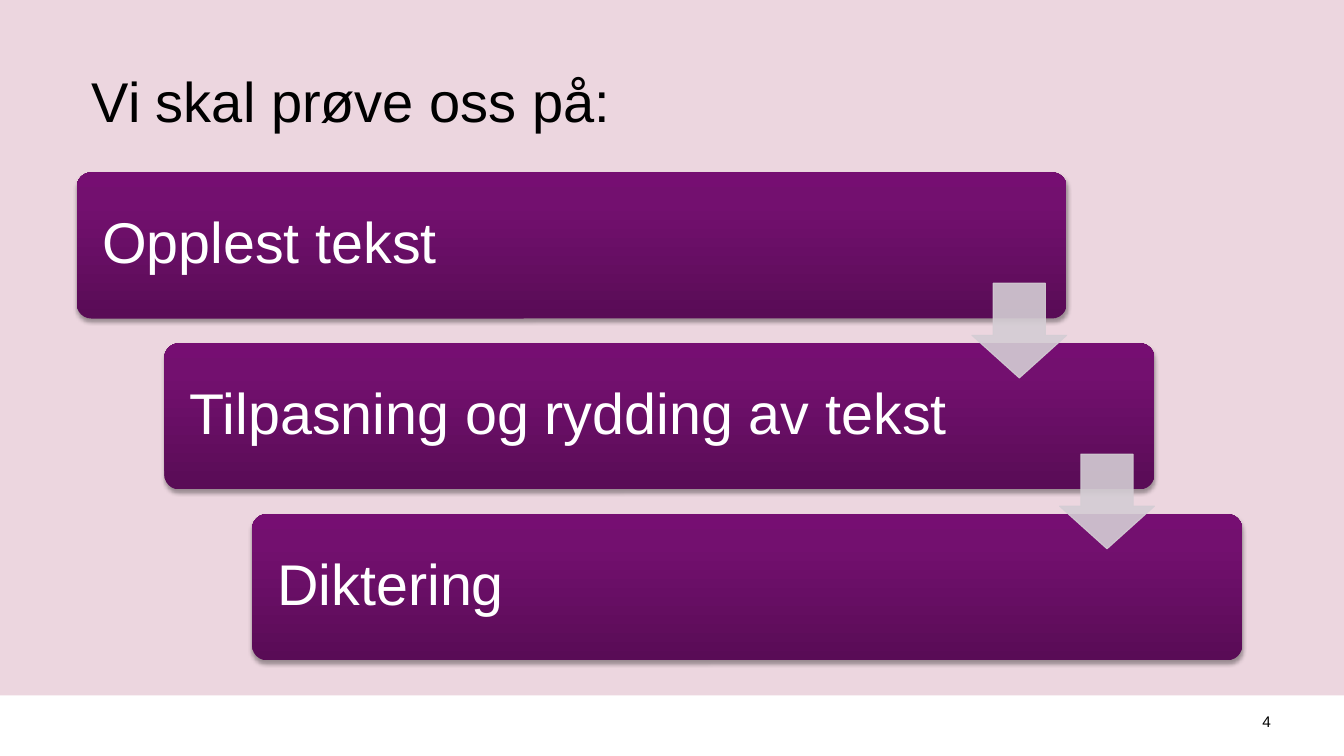
"""Build a slide with three stepped boxes joined by arrows."""
from lxml.etree import SubElement
from pptx import Presentation
from pptx.dml.color import RGBColor
from pptx.enum.shapes import MSO_SHAPE
from pptx.enum.text import MSO_ANCHOR, PP_ALIGN
from pptx.oxml import parse_xml
from pptx.oxml.ns import qn
from pptx.util import Inches, Pt

TITLE = "Vi skal prøve oss på:"
STEPS = ["Opplest tekst", "Tilpasning og rydding av tekst", "Diktering"]
NUMBER = "4"
COLORS = {"band": "ECD6DF", "text": "000000", "label": "FFFFFF",
          "low": "590C56", "mid": "73106F", "high": "760E72", "arrow": "D4CDD4"}
FONT = "Arial"
LEFT, TOP, WIDE, HIGH = 0.76, 1.71, 9.82, 1.45
SHIFT, DROP = 0.87, 1.695
ARROW = 0.94
NS = 'xmlns:a="http://schemas.openxmlformats.org/drawingml/2006/main"'


def color(name):
    return RGBColor.from_string(COLORS[name])


def write(shape, text, size, tint, inset=0):
    frame = shape.text_frame
    frame.word_wrap = True
    frame.vertical_anchor = MSO_ANCHOR.MIDDLE
    frame.margin_left = Inches(inset)
    frame.margin_right = frame.margin_top = frame.margin_bottom = 0
    frame.text = text
    para = frame.paragraphs[0]
    para.alignment = PP_ALIGN.LEFT
    para.font.name, para.font.size = FONT, Pt(size)
    para.font.color.rgb = color(tint)
    return para


def draw(shapes, kind, *box):
    shape = shapes.add_shape(kind, *map(Inches, box))
    shape.shadow.inherit = False
    shape.line.fill.background()
    return shape


def shade(shape):
    stops = "".join(
        f'<a:gs pos="{pos}000"><a:srgbClr val="{COLORS[name]}"/></a:gs>'
        for pos, name in ((0, "low"), (80, "mid"), (100, "high")))
    fill = parse_xml(f'<a:gradFill {NS} rotWithShape="1"><a:gsLst>{stops}</a:gsLst>'
                     '<a:lin ang="16200000" scaled="0"/></a:gradFill>')
    props = shape.fill._xPr
    props.find(qn("a:prstGeom")).addnext(fill)
    glow = SubElement(props.find(qn("a:effectLst")), qn("a:outerShdw"),
                      blurRad=str(Pt(3.1)), dist=str(Pt(1.8)), dir="5400000",
                      rotWithShape="0")
    tint = SubElement(glow, qn("a:srgbClr"), val="000000")
    SubElement(tint, qn("a:alpha"), val="35000")


def fade(fill):
    tint = fill._xPr.find(qn("a:solidFill"))[0]
    SubElement(tint, qn("a:alpha"), val="90000")


def main():
    deck = Presentation()
    deck.slide_width, deck.slide_height = Inches(13.33), Inches(7.5)
    slide = deck.slides.add_slide(deck.slide_layouts[5])
    shapes = slide.shapes

    band = draw(shapes, MSO_SHAPE.RECTANGLE, 0, 0, 13.33, 6.9)
    band.fill.solid()
    band.fill.fore_color.rgb = color("band")
    title = shapes.title
    title._element.addprevious(band._element)
    title.left, title.top = Inches(0.76), Inches(0.64)
    title.width, title.height = Inches(11.55), Inches(0.7)
    write(title, TITLE, 40, "text", 0.15)

    page = shapes.add_textbox(*map(Inches, (12.52, 7.02, 0.43, 0.28)))
    write(page, NUMBER, 11, "text")

    for i, step in enumerate(STEPS):
        box = draw(shapes, MSO_SHAPE.ROUNDED_RECTANGLE,
                   LEFT + i * SHIFT, TOP + i * DROP, WIDE, HIGH)
        box.adjustments[0] = 0.1
        shade(box)
        write(box, step, 41, "label", 0.21).line_spacing = 0.9

    for i in range(len(STEPS) - 1):
        arrow = draw(shapes, MSO_SHAPE.DOWN_ARROW, LEFT + WIDE - ARROW + i * SHIFT,
                     2.81 + i * DROP, ARROW, ARROW)
        arrow.adjustments[0], arrow.adjustments[1] = 0.55, 0.45
        arrow.line.width = Pt(0.75)
        for fill in (arrow.fill, arrow.line.fill):
            fill.solid()
            fill.fore_color.rgb = color("arrow")
            fade(fill)

    deck.save("out.pptx")


if __name__ == "__main__":
    main()
